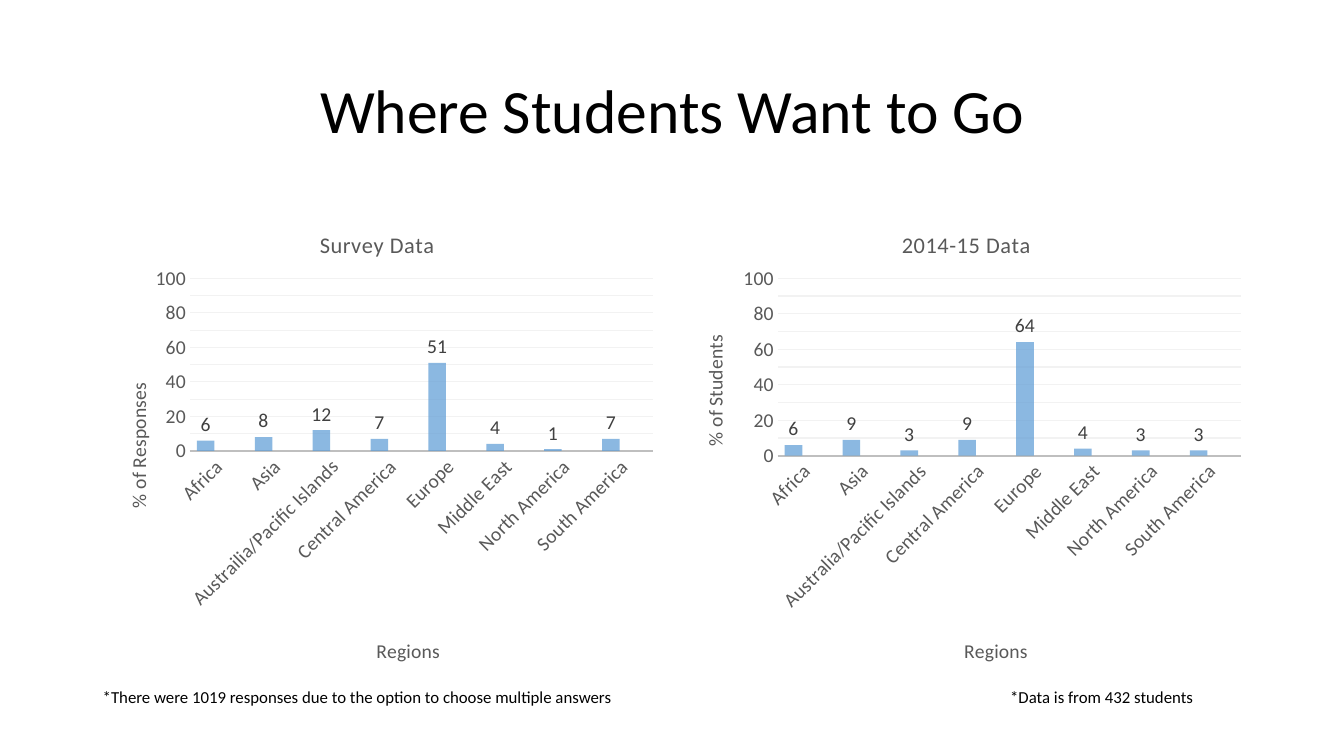
from copy import deepcopy

from lxml import etree
from pptx import Presentation
from pptx.chart.data import CategoryChartData
from pptx.dml.color import RGBColor
from pptx.enum.chart import XL_CHART_TYPE as ChartType
from pptx.enum.chart import XL_LABEL_POSITION as LabelPosition
from pptx.enum.chart import XL_TICK_MARK as TickMark
from pptx.enum.text import MSO_ANCHOR, PP_ALIGN
from pptx.oxml.ns import qn
from pptx.util import Inches, Pt

FONT = "Calibri"
BLACK = RGBColor(0x00, 0x00, 0x00)
DARK_GRAY = RGBColor(0x40, 0x40, 0x40)
TEXT_GRAY = RGBColor(0x59, 0x59, 0x59)
AXIS_GRAY = RGBColor(0xBF, 0xBF, 0xBF)
GRID_GRAY = RGBColor(0xF2, 0xF2, 0xF2)
BLUE = RGBColor(0x5B, 0x9B, 0xD5)
ORANGE = RGBColor(0xED, 0x7D, 0x31)
SILVER = RGBColor(0xA5, 0xA5, 0xA5)


def style_font(font, size, color):
    font.name = FONT
    font.size = Pt(size)
    font.bold = False
    font.color.rgb = color


def set_layout(parent, **fractions):
    """Place a chart part by fractions of the chart area."""
    for old in parent.findall(qn("c:layout")):
        parent.remove(old)
    layout = etree.Element(qn("c:layout"))
    manual = etree.SubElement(layout, qn("c:manualLayout"))
    if "w" in fractions:
        etree.SubElement(manual, qn("c:layoutTarget")).set("val", "inner")
    for key in ("x", "y"):
        etree.SubElement(manual, qn(f"c:{key}Mode")).set("val", "edge")
    for key, value in fractions.items():
        etree.SubElement(manual, qn(f"c:{key}")).set("val", str(value))
    parent.insert(0 if parent.find(qn("c:tx")) is None else 1, layout)


deck = Presentation()
deck.slide_width = Inches(13.33)
deck.slide_height = Inches(7.5)
page = deck.slides.add_slide(deck.slide_layouts[6])

# Title
box = page.shapes.add_textbox(Inches(0.92), Inches(0.4), Inches(11.5), Inches(1.45))
frame = box.text_frame
frame.word_wrap = True
frame.vertical_anchor = MSO_ANCHOR.MIDDLE
frame.text = "Where Students Want to Go"
para = frame.paragraphs[0]
para.alignment = PP_ALIGN.CENTER
para.line_spacing = 0.9
style_font(para.runs[0].font, 44, BLACK)

# Charts: left, title, title x, value title, its x and y, plot height, Pacific label, values
charts = [
    (0.92, "Survey Data", 0.39, "% of Responses", 0.05, 0.37, 0.36,
     "Austrailia/Pacific Islands", (6, 8, 12, 7, 51, 4, 1, 7)),
    (6.75, "2014-15 Data", 0.38, "% of Students", 0.03, 0.27, 0.37,
     "Australia/Pacific Islands", (6, 9, 3, 9, 64, 4, 3, 3)),
]
for left, title, title_x, value_title, value_x, value_y, plot_height, pacific, values in charts:
    data = CategoryChartData()
    data.categories = ["Africa", "Asia", pacific, "Central America", "Europe",
                       "Middle East", "North America", "South America"]
    data.add_series("Series 1", values)
    for name in ("Series 2", "Series 3"):
        data.add_series(name, [None] * len(values))
    chart = page.shapes.add_chart(ChartType.COLUMN_CLUSTERED, Inches(left), Inches(2),
                                  Inches(5.67), Inches(4.76), data).chart
    style_font(chart.font, 14, BLACK)
    chart.has_legend = False
    chart.has_title = True
    regions, percent = chart.category_axis, chart.value_axis

    # Chart and axis titles
    for part, text, size, spacing, rotation, x, y in (
        (chart.chart_title, title, 16, 50, 0, title_x, 0.05),
        (regions.axis_title, "Regions", 14, 0, 0, 0.49, 0.9),
        (percent.axis_title, value_title, 14, 0, -90, value_x, value_y),
    ):
        part.text_frame.text = text
        span = part.text_frame.paragraphs[0].runs[0]
        style_font(span.font, size, TEXT_GRAY)
        span._r.get_or_add_rPr().set("spc", str(spacing))
        part._element.xpath(".//a:bodyPr")[0].set("rot", str(rotation * 60000))
        set_layout(part._element, x=x, y=y)

    # Axes and gridlines
    for axis in (regions, percent):
        axis.major_tick_mark = axis.minor_tick_mark = TickMark.NONE
        style_font(axis.tick_labels.font, 14, TEXT_GRAY)
    regions._element.xpath("./c:txPr/a:bodyPr")[0].set("rot", str(-45 * 60000))
    regions.format.line.color.rgb = AXIS_GRAY
    regions.format.line.width = Pt(1.25)
    percent.format.line.fill.background()
    percent.minimum_scale, percent.maximum_scale = 0, 100
    percent.major_unit, percent.minor_unit = 20, 10
    percent.has_major_gridlines = percent.has_minor_gridlines = True
    grid_line = percent.major_gridlines.format.line
    grid_line.color.rgb = GRID_GRAY
    grid_line.width = Pt(0.75)
    grid_style = percent._element.xpath("./c:majorGridlines/c:spPr")[0]
    percent._element.xpath("./c:minorGridlines")[0].append(deepcopy(grid_style))

    # Columns and value labels
    plot = chart.plots[0]
    plot.gap_width, plot.overlap = 80, 25
    plot.vary_by_categories = False
    for series, color in zip(plot.series, (BLUE, ORANGE, SILVER)):
        series.format.fill.solid()
        series.format.fill.fore_color.rgb = color
        fill_color = series._element.xpath("./c:spPr/a:solidFill/a:srgbClr")[0]
        etree.SubElement(fill_color, qn("a:alpha")).set("val", "70000")
    labels = plot.series[0].data_labels
    labels.show_value = True
    labels.position = LabelPosition.OUTSIDE_END
    style_font(labels.font, 14, DARK_GRAY)
    set_layout(chart._chartSpace.xpath("./c:chart/c:plotArea")[0],
               x=0.17, y=0.16, w=0.81, h=plot_height)

# Footnotes, the second one at a tab stop
box = page.shapes.add_textbox(Inches(0.92), Inches(6.76), Inches(12.01), Inches(0.3))
box.text_frame.word_wrap = True
para = box.text_frame.paragraphs[0]
para.text = ("*There were 1019 responses due to the option to choose multiple answers"
             "\t*Data is from 432 students")
style_font(para.runs[0].font, 12, BLACK)
tabs = etree.SubElement(para._p.get_or_add_pPr(), qn("a:tabLst"))
etree.SubElement(tabs, qn("a:tab"), pos=str(Inches(9)), algn="l")

deck.save("out.pptx")
